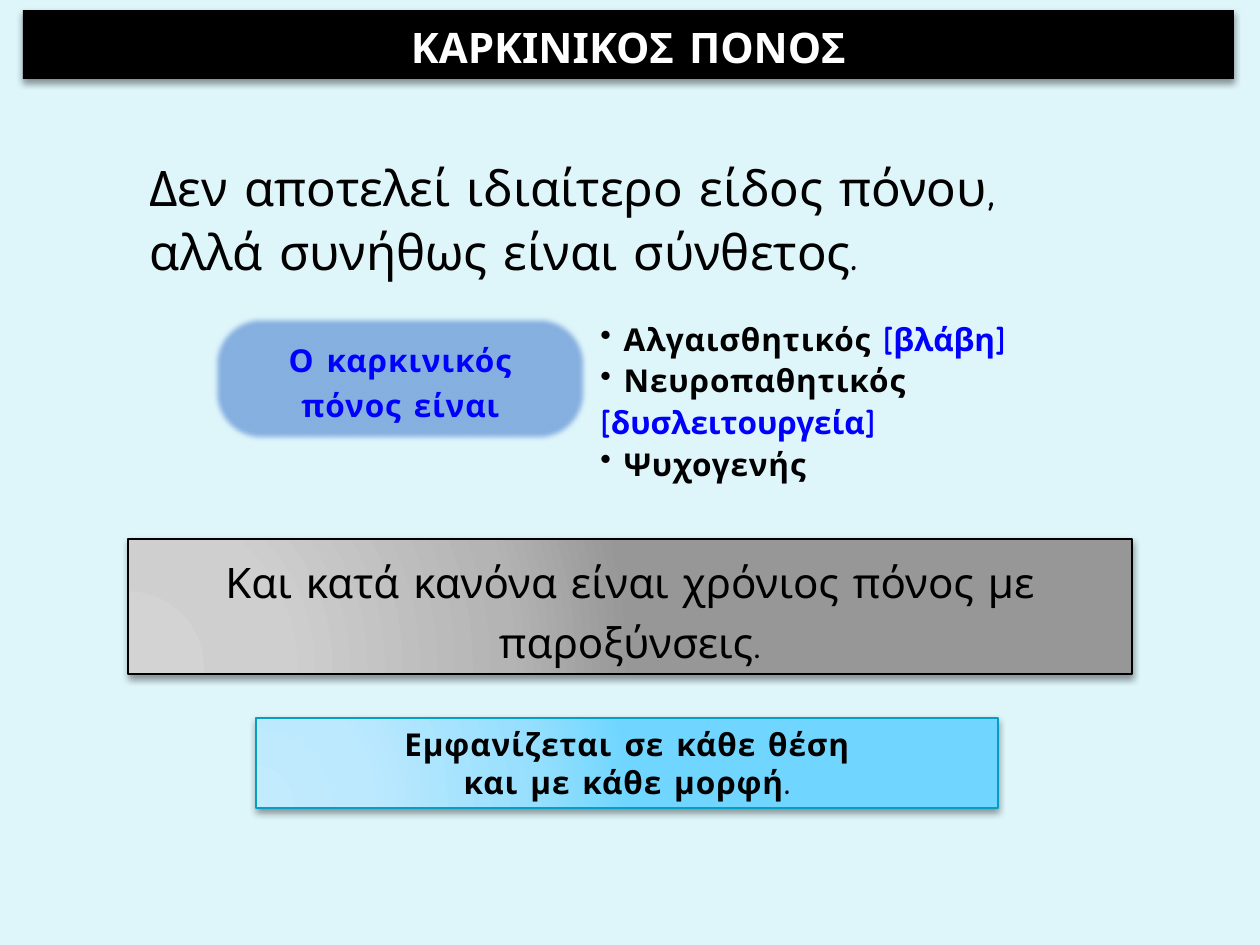
from lxml.etree import SubElement
from pptx import Presentation
from pptx.dml.color import RGBColor
from pptx.enum.shapes import MSO_SHAPE
from pptx.enum.text import MSO_ANCHOR, PP_ALIGN
from pptx.oxml import parse_xml
from pptx.oxml.ns import nsdecls, qn
from pptx.util import Emu, Pt

PX = 914400 / 126
BLACK = RGBColor(0x00, 0x00, 0x00)
WHITE = RGBColor(0xFF, 0xFF, 0xFF)
BLUE = RGBColor(0x00, 0x00, 0xFF)
SOFT_BLUE = RGBColor(0x86, 0xB0, 0xE0)
TEAL = RGBColor(0x07, 0x9E, 0xC3)
PALE = RGBColor(0xDE, 0xF5, 0xFA)
GREYS = ("D3D3D3", "CFCFCF", "B4B4B4", "979797")
SKIES = ("C2EBFD", "BCE9FE", "96DFFE", "70D6FF")

prs = Presentation()
prs.slide_width, prs.slide_height = Emu(round(1260 * PX)), Emu(round(945 * PX))
slide = prs.slides.add_slide(prs.slide_layouts[6])
slide.background.fill.solid()
slide.background.fill.fore_color.rgb = PALE


def add_box(bounds, kind=MSO_SHAPE.RECTANGLE, shadow_alpha=None):
    """Add a shape without line, with a soft shadow below it if an alpha is given."""
    box = slide.shapes.add_shape(kind, *(Emu(round(v * PX)) for v in bounds))
    box.line.fill.background()
    box.shadow.inherit = False
    if shadow_alpha:
        effects = box._element.spPr.find(qn("a:effectLst"))
        effects.append(parse_xml(
            f'<a:outerShdw {nsdecls("a")} blurRad="{Pt(4)}" dist="{Pt(2)}" dir="5400000" '
            f'rotWithShape="0"><a:srgbClr val="000000"><a:alpha val="{shadow_alpha}000"/>'
            '</a:srgbClr></a:outerShdw>'))
    return box


def write(box, lines, size, color=BLACK, bold=False, spacing=None, centered=True, bullet=False):
    """Fill a box with lines, each a list of (text, own colour or None) runs."""
    frame = box.text_frame
    frame.word_wrap = True
    frame.vertical_anchor = MSO_ANCHOR.MIDDLE if centered else MSO_ANCHOR.TOP
    for i, line in enumerate(lines):
        paragraph = frame.paragraphs[0] if i == 0 else frame.add_paragraph()
        paragraph.alignment = PP_ALIGN.CENTER if centered else PP_ALIGN.LEFT
        if spacing:
            paragraph.line_spacing = spacing
        if bullet:
            SubElement(paragraph._p.get_or_add_pPr(), qn("a:buChar"), char="•")
        font = paragraph.font
        font.name, font.size, font.bold = "Comic Neue", Pt(size), bold
        font.color.rgb = color
        for text, own_color in line:
            run = paragraph.add_run()
            run.text = text
            if own_color is not None:
                run.font.color.rgb = own_color
            elif bold and size == 18:
                run._r.get_or_add_rPr().set("spc", "50")


# Cancer pain and its kinds
topic = add_box((213, 316, 375, 126), MSO_SHAPE.ROUNDED_RECTANGLE)
topic.adjustments[0] = 0.35
topic.fill.solid()
topic.fill.fore_color.rgb = SOFT_BLUE
SubElement(topic._element.spPr.find(qn("a:effectLst")), qn("a:softEdge"), rad=str(Pt(3)))
write(topic, [[("Ο καρκινικός πόνος είναι", None)]], 18, BLUE, True, 1.2)

kinds = slide.shapes.add_textbox(*(Emu(round(v * PX)) for v in (588, 310, 593, 139)))
write(kinds, [
    [(" Αλγαισθητικός", None), (" [βλάβη]", BLUE)],
    [(" Νευροπαθητικός", None), (" [δυσλειτουργεία]", BLUE)],
    [(" Ψυχογενής", None)],
], 18, bold=True, spacing=1.1, centered=False, bullet=True)

intro = slide.shapes.add_textbox(*(Emu(round(v * PX)) for v in (137, 145, 994, 144)))
write(intro, [[("Δεν αποτελεί ιδιαίτερο είδος πόνου, αλλά συνήθως είναι σύνθετος.", None)]],
      28, spacing=1.1, centered=False)

# Two gradient statements
chronic = add_box((128, 539, 1004, 135), shadow_alpha=40)
everywhere = add_box((256, 718, 742, 90), shadow_alpha=40)
for box, shades, edge in ((chronic, GREYS, BLACK), (everywhere, SKIES, TEAL)):
    stops = "".join(f'<a:gs pos="{pos}000"><a:srgbClr val="{shade}"/></a:gs>'
                    for pos, shade in zip((0, 30, 75, 100), shades))
    box._element.spPr.find(qn("a:prstGeom")).addnext(parse_xml(
        f'<a:gradFill {nsdecls("a")} rotWithShape="1"><a:gsLst>{stops}</a:gsLst>'
        '<a:path path="circle"><a:fillToRect l="5000" t="100000" r="120000" b="10000"/>'
        '</a:path></a:gradFill>'))
    box.line.color.rgb = edge
    box.line.width = Pt(1)

write(chronic, [[("Και κατά κανόνα είναι χρόνιος πόνος με παροξύνσεις", None), (".", None)]],
      24, spacing=1.2)
full_stop = chronic.text_frame.paragraphs[0].runs[-1]
full_stop.font.name, full_stop.font.size = "Calibri", Pt(18)
write(everywhere, [[("Εμφανίζεται σε κάθε θέση", None)], [("και με κάθε μορφή.", None)]],
      18, bold=True)

# Title bar
title = add_box((23, 10, 1211, 69), shadow_alpha=42)
title.fill.solid()
title.fill.fore_color.rgb = BLACK
write(title, [[("ΚΑΡΚΙΝΙΚΟΣ ΠΟΝΟΣ", None)]], 24, WHITE, True, 1.1)

prs.save("out.pptx")
